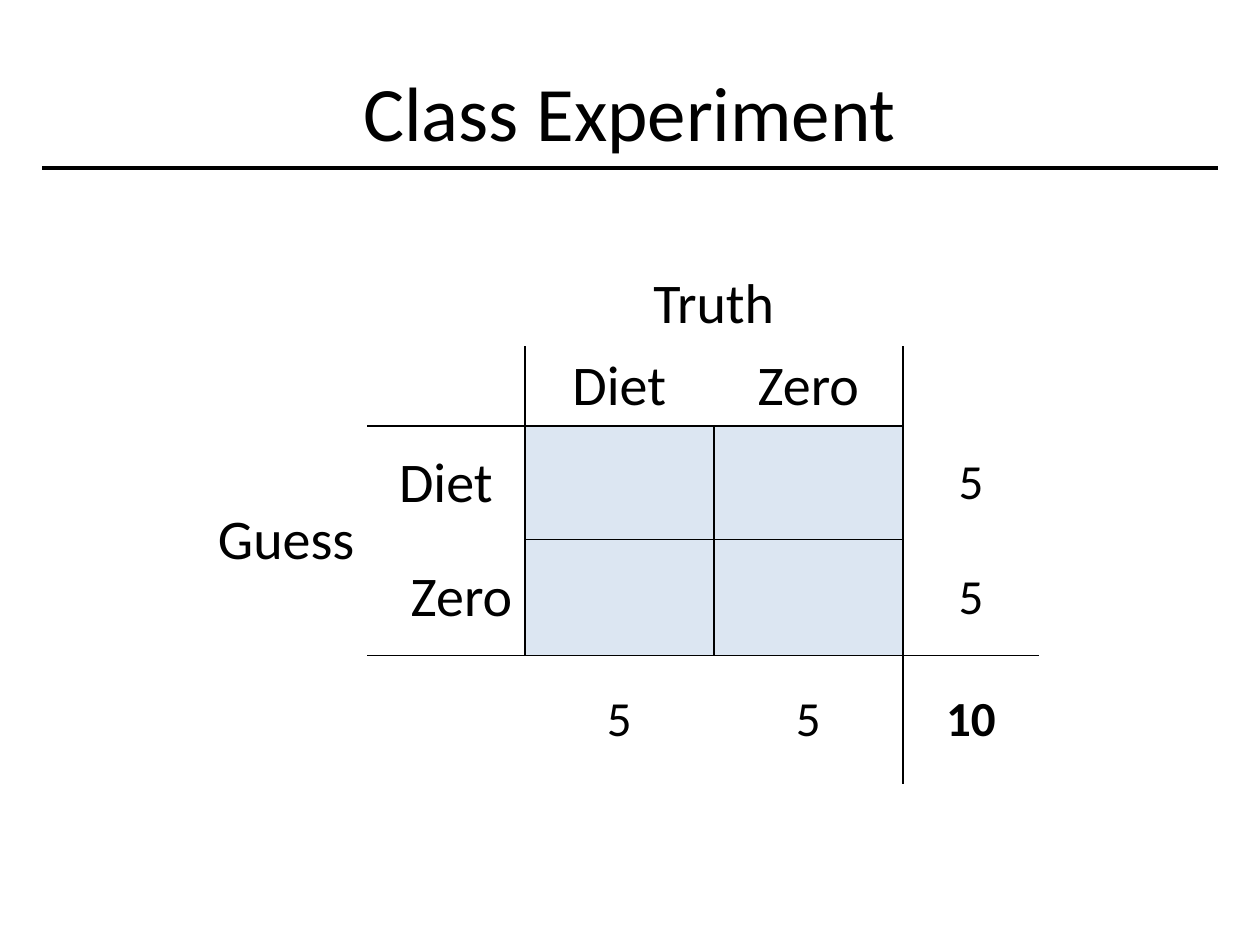
from lxml.etree import SubElement
from pptx import Presentation
from pptx.dml.color import RGBColor
from pptx.enum.shapes import MSO_CONNECTOR
from pptx.enum.text import MSO_ANCHOR, PP_ALIGN
from pptx.oxml.ns import qn
from pptx.util import Cm, Pt

COLORS = {"ink": "000000", "count": "DCE6F2"}
FONT = "Calibri"
LABEL_SIZE, NUMBER_SIZE = 32, 28

COLUMN_WIDTHS = [4.02, 3.18, 3.81, 3.81, 2.75]
ROW_HEIGHTS = [1.7, 1.48, 2.29, 2.33, 2.59]
LABELS = {
    (0, 2): "Truth",
    (1, 2): "Diet", (1, 3): "Zero",
    (2, 0): "Guess", (2, 1): "Diet", (3, 1): "Zero",
}
TOTALS = {(2, 4): "5", (3, 4): "5", (4, 2): "5", (4, 3): "5", (4, 4): "10"}
RIGHT_ALIGNED = {(2, 0), (3, 1)}
COUNT_CELLS = {(row, column) for row in (2, 3) for column in (2, 3)}

# Line before a row: the columns it crosses; line before a column: the rows.
ROW_RULES = {2: range(1, 4), 3: range(2, 4), 4: range(1, 5)}
COLUMN_RULES = {2: range(1, 4), 3: range(2, 4), 4: range(1, 5)}


def write(text_frame, text, size, align=PP_ALIGN.CENTER, bold=False):
    text_frame.text = text
    paragraph = text_frame.paragraphs[0]
    paragraph.alignment = align
    font = paragraph.runs[0].font
    font.name, font.size, font.bold = FONT, Pt(size), bold
    font.color.rgb = RGBColor.from_string(COLORS["ink"])


def add_title(slide, text):
    shape = slide.shapes.add_textbox(Cm(1.27), Cm(0.64), Cm(22.86), Cm(3.18))
    shape.text_frame.word_wrap = True
    shape.text_frame.vertical_anchor = MSO_ANCHOR.MIDDLE
    write(shape.text_frame, text, 44)


def add_title_rule(slide):
    rule = slide.shapes.add_connector(
        MSO_CONNECTOR.STRAIGHT, Cm(0.85), Cm(3.39), Cm(24.55), Cm(3.39))
    rule.line.color.rgb = RGBColor.from_string(COLORS["ink"])
    rule.line.width = Pt(2)
    SubElement(rule._element.spPr, qn("a:effectLst"))


def set_borders(cell, row, column):
    """Draw the rules that touch this cell and hide its other borders."""
    sides = {
        "lnL": row in COLUMN_RULES.get(column, ()),
        "lnR": row in COLUMN_RULES.get(column + 1, ()),
        "lnT": column in ROW_RULES.get(row, ()),
        "lnB": column in ROW_RULES.get(row + 1, ()),
    }
    properties = cell._tc.get_or_add_tcPr()
    for side, visible in sides.items():
        border = SubElement(properties, qn(f"a:{side}"), w=str(Pt(1)))
        if visible:
            fill = SubElement(border, qn("a:solidFill"))
            SubElement(fill, qn("a:srgbClr"), val=COLORS["ink"])
        else:
            SubElement(border, qn("a:noFill"))


def format_cell(cell, row, column):
    position = (row, column)
    set_borders(cell, row, column)
    if position in COUNT_CELLS:
        cell.fill.solid()
        cell.fill.fore_color.rgb = RGBColor.from_string(COLORS["count"])
    else:
        cell.fill.background()
    cell.vertical_anchor = MSO_ANCHOR.MIDDLE
    if position in LABELS:
        align = PP_ALIGN.RIGHT if position in RIGHT_ALIGNED else PP_ALIGN.CENTER
        write(cell.text_frame, LABELS[position], LABEL_SIZE, align)
    elif position in TOTALS:
        write(cell.text_frame, TOTALS[position], NUMBER_SIZE, bold=position == (4, 4))


def add_guess_table(slide):
    table = slide.shapes.add_table(
        len(ROW_HEIGHTS), len(COLUMN_WIDTHS), Cm(3.38), Cm(5.28),
        Cm(sum(COLUMN_WIDTHS)), Cm(sum(ROW_HEIGHTS))).table
    table.first_row = table.horz_banding = False
    for column, width in zip(table.columns, COLUMN_WIDTHS):
        column.width = Cm(width)
    for row, height in zip(table.rows, ROW_HEIGHTS):
        row.height = Cm(height)
    table.cell(0, 2).merge(table.cell(0, 3))
    table.cell(2, 0).merge(table.cell(3, 0))
    for row in range(len(ROW_HEIGHTS)):
        for column in range(len(COLUMN_WIDTHS)):
            format_cell(table.cell(row, column), row, column)


def main():
    presentation = Presentation()
    presentation.slide_width, presentation.slide_height = Cm(25.4), Cm(19.05)
    slide = presentation.slides.add_slide(presentation.slide_layouts[6])
    add_title(slide, "Class Experiment")
    add_guess_table(slide)
    add_title_rule(slide)
    presentation.save("out.pptx")


if __name__ == "__main__":
    main()
